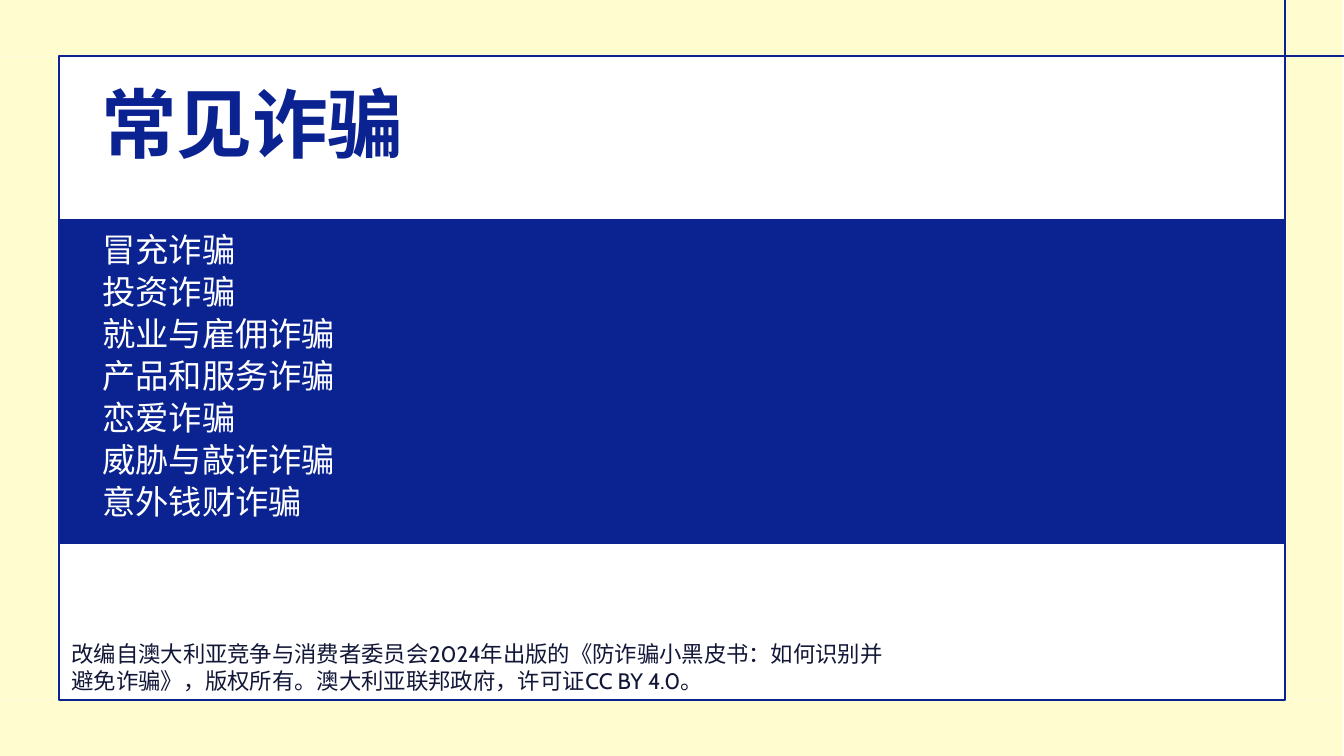
import pptx
import pptx.dml.color
import pptx.enum.shapes
import pptx.enum.text
import pptx.util
from lxml import etree

Pt = pptx.util.Pt
RGBColor = pptx.dml.color.RGBColor

TITLE = "常见诈骗"
SCAMS = ["冒充诈骗", "投资诈骗", "就业与雇佣诈骗", "产品和服务诈骗",
         "恋爱诈骗", "威胁与敲诈诈骗", "意外钱财诈骗"]
CREDIT = ("改编自澳大利亚竞争与消费者委员会2024年出版的《防诈骗小黑皮书：如何识别并避免诈骗》，"
          "版权所有。澳大利亚联邦政府，许可证CC BY 4.0。")

BLUE = RGBColor(0x0A, 0x23, 0x91)
CREAM = RGBColor(0xFF, 0xFC, 0xCF)
INK = RGBColor(0x12, 0x17, 0x37)
WHITE = RGBColor(0xFF, 0xFF, 0xFF)
CJK = "Noto Sans CJK SC"
LATIN = "Cabin"

W, H = 960, 540
EDGE = 42
BAND = 40.3
INNER_W = W - 2 * EDGE
INNER_H = H - 2 * BAND


def write(shape, lines, font, size, color, bold=False, spacing=None):
    tf = shape.text_frame
    tf.word_wrap = True
    tf.auto_size = pptx.enum.text.MSO_AUTO_SIZE.NONE
    tf.vertical_anchor = pptx.enum.text.MSO_ANCHOR.TOP
    tf.text = "\n".join(lines)
    for p in tf.paragraphs:
        p.alignment = pptx.enum.text.PP_ALIGN.LEFT
        p.space_before = Pt(0)
        if spacing:
            p.line_spacing = Pt(spacing)
        for r in p.runs:
            r.font.name = font
            r.font.size = Pt(size)
            r.font.bold = bold
            r.font.color.rgb = color
            latin = r.font._element.find(pptx.oxml.ns.qn("a:latin"))
            ea = etree.Element(pptx.oxml.ns.qn("a:ea"), typeface=font)
            latin.addnext(ea)
    return tf


def box(s, x, y, w, h, fill=None, line=None):
    sp = s.shapes.add_shape(pptx.enum.shapes.MSO_SHAPE.RECTANGLE,
                            Pt(x), Pt(y), Pt(w), Pt(h))
    sp.shadow.inherit = False
    if fill is None:
        sp.fill.background()
    else:
        sp.fill.solid()
        sp.fill.fore_color.rgb = fill
    if line is None:
        sp.line.fill.background()
    else:
        sp.line.color.rgb = line
        sp.line.width = Pt(1.5)


def main():
    prs = pptx.Presentation()
    prs.slide_width, prs.slide_height = Pt(W), Pt(H)
    s = prs.slides.add_slide(prs.slide_layouts[5])

    title = s.shapes.title
    title.left, title.top, title.width, title.height = Pt(65), Pt(53.3), Pt(828), Pt(102)
    write(title, [TITLE], CJK, 54, BLUE, bold=True, spacing=63)

    credit = s.shapes.add_textbox(Pt(44), Pt(453.6), Pt(595.5), Pt(46))
    write(credit, [CREDIT], LATIN, 16, INK)

    for y in (0, H - BAND):
        box(s, -1, y, W, BAND, fill=CREAM)
    for x in (-1, W - EDGE - 1):
        box(s, x, BAND, EDGE, INNER_H, fill=CREAM)

    box(s, W - EDGE, -9.4, 51, BAND + 9.4, line=BLUE)
    box(s, EDGE, BAND, INNER_W, INNER_H, line=BLUE)
    box(s, EDGE, 157, INNER_W - 1, 231, fill=BLUE, line=BLUE)

    scams = s.shapes.add_textbox(Pt(66), Pt(162), Pt(828), Pt(213))
    tf = write(scams, SCAMS, CJK, 23.8, WHITE, spacing=30)
    tf.margin_top = Pt(0)

    prs.save("out.pptx")


if __name__ == "__main__":
    main()
